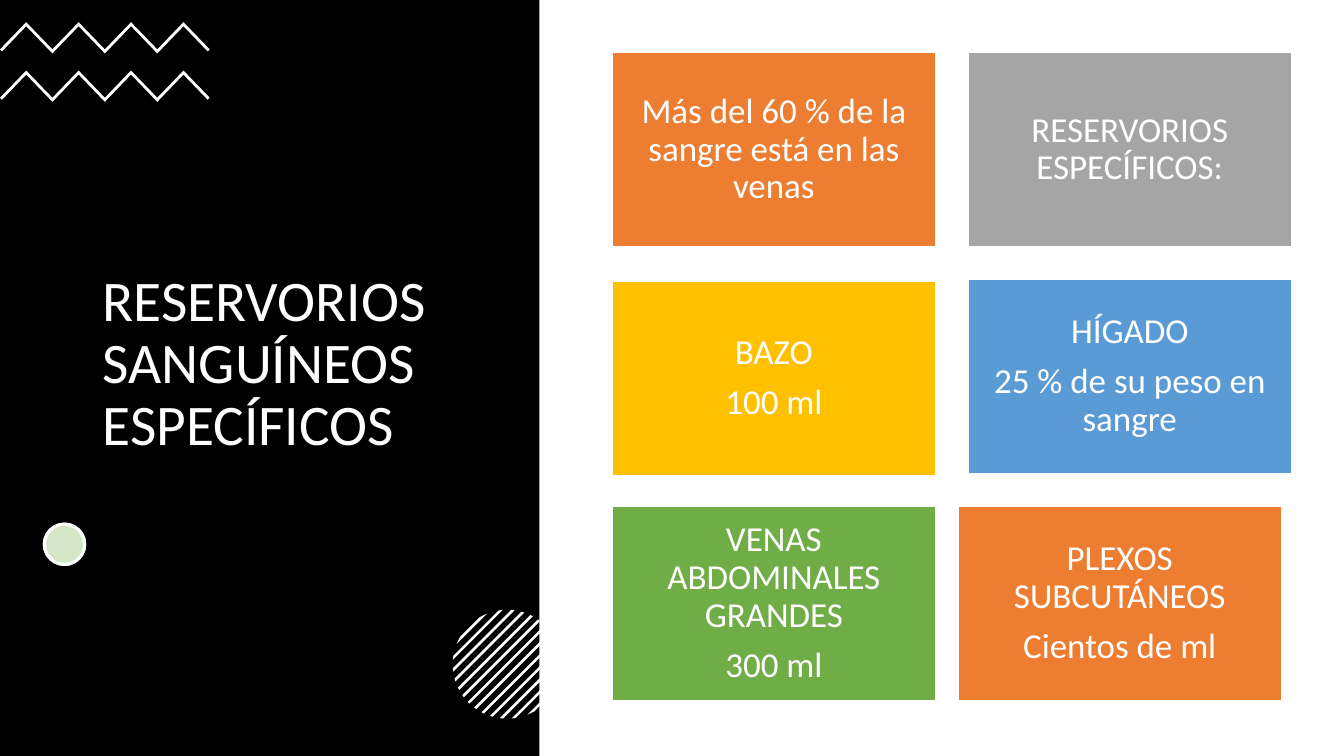
from math import sqrt

from lxml import etree
from pptx import Presentation
from pptx.dml.color import RGBColor
from pptx.enum.shapes import MSO_SHAPE
from pptx.enum.text import MSO_ANCHOR, PP_ALIGN
from pptx.oxml.ns import qn
from pptx.util import Pt

RECTANGLE = MSO_SHAPE.RECTANGLE
OVAL = MSO_SHAPE.OVAL
MIDDLE = MSO_ANCHOR.MIDDLE
LEFT = PP_ALIGN.LEFT
CENTER = PP_ALIGN.CENTER

EMU_PER_PX = 9144
FONT = "Calibri"
COLORS = {
    "black": "000000",
    "white": "FFFFFF",
    "orange": "ED7D31",
    "gray": "A5A5A5",
    "gold": "FFC000",
    "blue": "5B9BD5",
    "green": "70AD47",
}

CARD_WIDTH, CARD_HEIGHT = 321, 193
CARDS = [
    (607, 52, "orange", ["Más del 60 % de la sangre está en las venas"]),
    (960, 52, "gray", ["RESERVORIOS ESPECÍFICOS:"]),
    (607, 279, "gold", ["BAZO", "100 ml"]),
    (960, 277, "blue", ["HÍGADO", "25 % de su peso en sangre"]),
    (607, 502, "green", ["VENAS ABDOMINALES GRANDES", "300 ml"]),
    (950, 502, "orange", ["PLEXOS SUBCUTÁNEOS", "Cientos de ml"]),
]


def px(length):
    return round(length * EMU_PER_PX)


def color(name):
    return RGBColor.from_string(COLORS[name])


def paint(shape, fill, line_width=0):
    shape.shadow.inherit = False
    shape.fill.solid()
    shape.fill.fore_color.rgb = color(fill)
    if line_width:
        shape.line.color.rgb = color("white")
        shape.line.width = Pt(line_width)
    else:
        shape.line.fill.background()


def add_block(page, kind, left, top, width, height, fill, line_width=0):
    block = page.shapes.add_shape(kind, px(left), px(top), px(width), px(height))
    paint(block, fill, line_width)
    return block


def write_text(box, lines, size, align):
    frame = box.text_frame
    frame.word_wrap = True
    frame.vertical_anchor = MIDDLE
    frame.margin_left = frame.margin_right = px(10)
    frame.margin_top = frame.margin_bottom = px(10)
    frame.text = "\n".join(lines)
    for para in frame.paragraphs:
        para.alignment = align
        para.line_spacing = 0.9
        para.space_after = Pt(size * 0.35)
        para.font.name = FONT
        para.font.size = Pt(size)
        para.font.color.rgb = color("white")


def add_polygon(page, points):
    corners = [(px(x), px(y)) for x, y in points]
    builder = page.shapes.build_freeform(*corners[0], scale=1.0)
    builder.add_line_segments(corners[1:], close=True)
    paint(builder.convert_to_shape(), "white")


def add_zigzag(page, top, step=26, peaks=4, rise=27):
    upper = [(i * step, top + (0 if i % 2 else rise)) for i in range(2 * peaks + 1)]
    lower = [(x, y + 4) for x, y in upper[1:-1]]
    (first_x, first_y), (last_x, last_y) = upper[0], upper[-1]
    lower = [(first_x + 2, first_y + 2), *lower, (last_x - 2, last_y + 2)]
    add_polygon(page, upper + lower[::-1])


def add_hatched_circle(page, center_x, center_y, radius, step=6, half_band=0.9):
    def chord(offset):
        reach = sqrt(radius ** 2 / 2 - offset ** 2)
        x, y = center_x + offset, center_y + offset
        return [(x - reach, y + reach), (x + reach, y - reach)]

    for i in range(-6, 7):
        near, far = chord(i * step - half_band), chord(i * step + half_band)
        add_polygon(page, near + far[::-1])


def add_dot(page, left, top, size):
    add_block(page, OVAL, left, top, size, size, "white", 2.25)
    tint = add_block(page, OVAL, left, top, size, size, "green", 2.25)
    fill_color = tint.fill._xPr.find(qn("a:solidFill"))[0]
    etree.SubElement(fill_color, qn("a:alpha"), val="30000")


def add_title(page, text):
    box = page.shapes.add_textbox(px(92), px(131), px(350), px(463))
    write_text(box, [text], 41, LEFT)


def add_card(page, left, top, fill, lines):
    card = add_block(page, RECTANGLE, left, top, CARD_WIDTH, CARD_HEIGHT, fill, 1)
    write_text(card, lines, 25, CENTER)


def main():
    deck = Presentation()
    deck.slide_width, deck.slide_height = px(1333), px(750)
    page = deck.slides.add_slide(deck.slide_layouts[6])

    add_block(page, RECTANGLE, 0, 0, 535, 750, "black")
    add_title(page, "RESERVORIOS SANGUÍNEOS ESPECÍFICOS")
    for top in (22, 70):
        add_zigzag(page, top)
    add_dot(page, 44, 520, 40)
    add_hatched_circle(page, 503, 659, 54)
    for card in CARDS:
        add_card(page, *card)

    deck.save("out.pptx")


if __name__ == "__main__":
    main()
